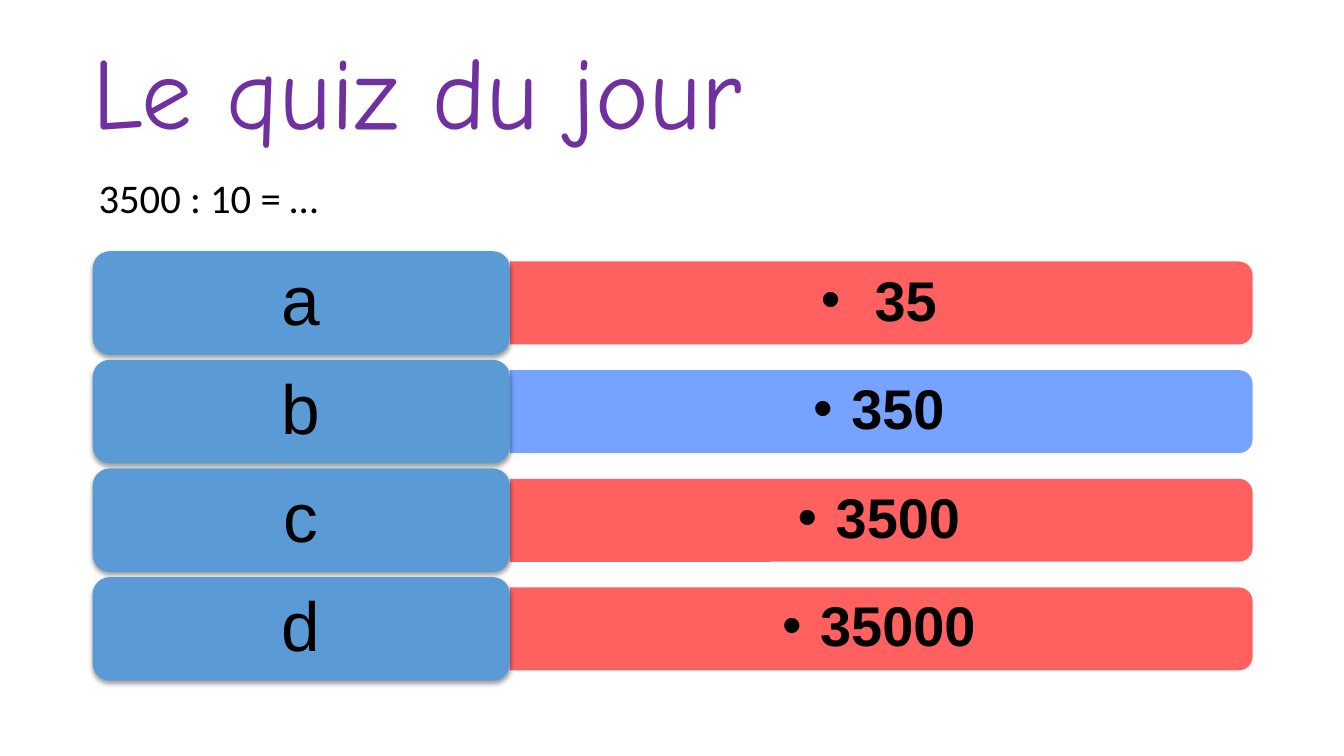
"""Build the quiz of the day slide: a question and four lettered answers."""
from lxml import etree
from pptx import Presentation
from pptx import util as u
from pptx.dml import color as c
from pptx.enum import shapes, text
from pptx.oxml import ns


def tint(target, shade):
    target.rgb = c.RGBColor.from_string(shade)


def write(holder, words, font="Arial", size=24, shade="000000", bold=False,
          align=text.PP_ALIGN.LEFT, anchor=text.MSO_ANCHOR.MIDDLE,
          insets=(0, 0, 0, 0), spacing=0.9, wrap=True):
    frame = holder.text_frame
    frame.word_wrap = wrap
    frame.vertical_anchor = anchor
    frame.margin_left, frame.margin_top, frame.margin_right, frame.margin_bottom = map(u.Pt, insets)
    para = frame.paragraphs[0]
    para.alignment = align
    para.line_spacing = spacing
    span = para.add_run()
    span.text = words
    span.font.name = font
    span.font.size = u.Pt(size)
    span.font.bold = bold
    tint(span.font.color, shade)
    return para


deck = Presentation()
deck.slide_width, deck.slide_height = u.Pt(793.44), u.Pt(446.4)
page = deck.slides.add_slide(deck.slide_layouts[6])

title = page.shapes.add_textbox(u.Pt(54.7), u.Pt(16.6), u.Pt(684.7), u.Pt(107.3))
write(title, "Le quiz du jour", font="Comic Neue", size=60, shade="7030A0",
      anchor=text.MSO_ANCHOR.TOP, insets=(0, 8, 0, 0))

label_left, label_top, label_width, label_height = 54.7, 148.3, 246.3, 61.2
pitch = 64.15
bar_left, bar_width, bar_height = label_left + label_width, 438.5, 49
answer_height = 44
answers = [("a", " 35", "FF5050"), ("b", "350", "6699FF"),
           ("c", "3500", "FF5050"), ("d", "35000", "FF5050")]

for row, (letter, answer, shade) in enumerate(answers):
    top = label_top + row * pitch
    middle = top + label_height / 2

    bar = page.shapes.add_shape(
        shapes.MSO_SHAPE.ROUND_2_SAME_RECTANGLE,
        u.Pt(bar_left + (bar_width - bar_height) / 2), u.Pt(middle - bar_width / 2),
        u.Pt(bar_height), u.Pt(bar_width))
    bar.rotation = 90
    label = page.shapes.add_shape(
        shapes.MSO_SHAPE.ROUNDED_RECTANGLE,
        u.Pt(label_left), u.Pt(top), u.Pt(label_width), u.Pt(label_height))
    for shape, fill in ((bar, shade), (label, "5B9BD5")):
        shape.shadow.inherit = False
        shape.fill.solid()
        tint(shape.fill.fore_color, fill)
        shape.line.fill.background()

    bar_color = bar.element.spPr.find(".//" + ns.qn("a:srgbClr"))
    etree.SubElement(bar_color, ns.qn("a:alpha"), val="90000")
    effects = label.element.spPr.find(ns.qn("a:effectLst"))
    shadow = etree.SubElement(effects, ns.qn("a:outerShdw"), blurRad=str(u.Pt(3.1)),
                              dist=str(u.Pt(1.6)), dir="5400000", rotWithShape="0")
    shadow_color = etree.SubElement(shadow, ns.qn("a:srgbClr"), val="000000")
    etree.SubElement(shadow_color, ns.qn("a:alpha"), val="38000")

    write(label, letter, size=41, align=text.PP_ALIGN.CENTER, insets=(12, 6, 12, 6))
    box = page.shapes.add_textbox(u.Pt(bar_left), u.Pt(middle - answer_height / 2),
                                  u.Pt(435.6), u.Pt(answer_height))
    para = write(box, answer, size=33, bold=True, align=text.PP_ALIGN.CENTER,
                 insets=(10, 5, 10, 5))
    bullet = para._p.get_or_add_pPr()
    bullet.set("marL", str(u.Pt(22.5)))
    bullet.set("indent", str(u.Pt(-22.5)))
    etree.SubElement(bullet, ns.qn("a:buFont"), typeface="Arial")
    etree.SubElement(bullet, ns.qn("a:buChar"), char="•")

question = page.shapes.add_textbox(u.Pt(51.1), u.Pt(98.6), u.Pt(144.7), u.Pt(36))
write(question, "3500 : 10 = …", font="Calibri", anchor=text.MSO_ANCHOR.TOP,
      insets=(7.2, 3.6, 7.2, 3.6), spacing=1.0, wrap=False)
question.text_frame.auto_size = text.MSO_AUTO_SIZE.SHAPE_TO_FIT_TEXT

deck.save("out.pptx")
